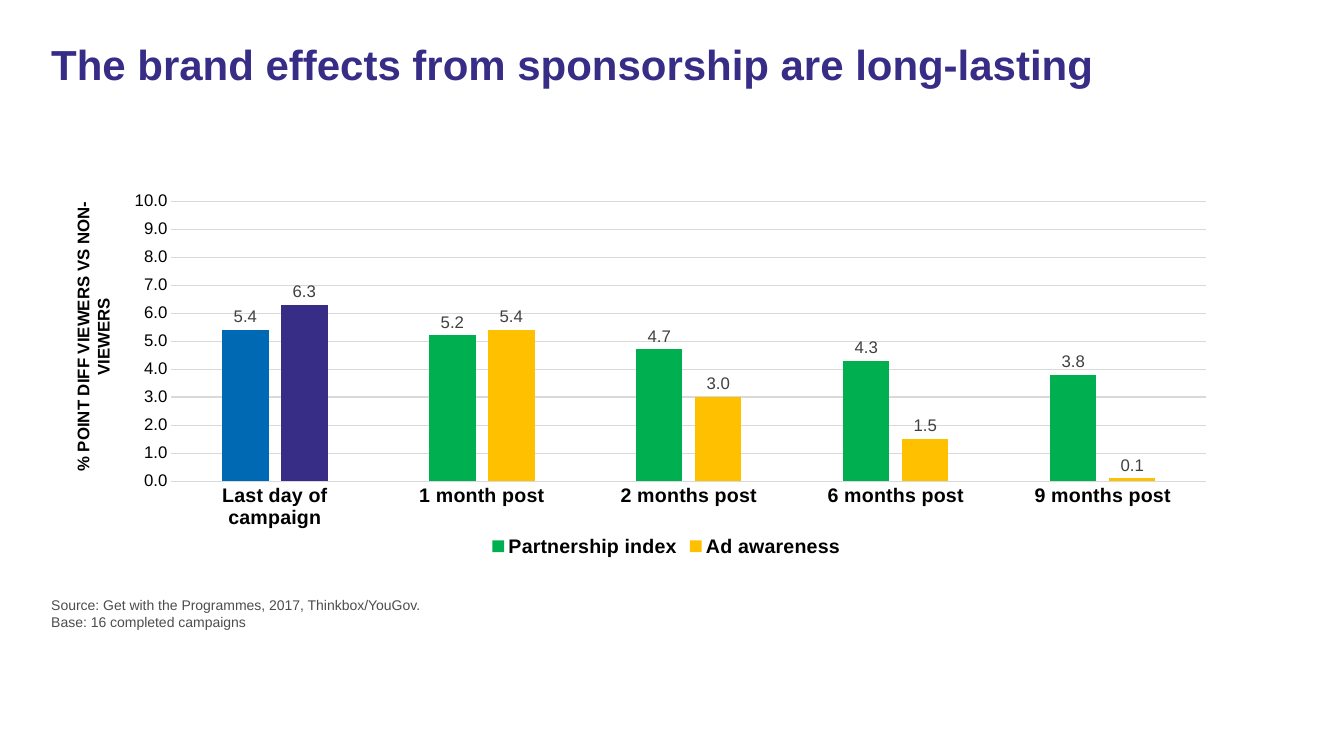
from dataclasses import dataclass

from lxml import etree
from pptx import Presentation
from pptx.chart.chart import Chart
from pptx.chart.data import CategoryChartData
from pptx.dml.color import RGBColor
from pptx.enum.chart import XL_CHART_TYPE, XL_LABEL_POSITION, XL_LEGEND_POSITION, XL_TICK_MARK
from pptx.enum.text import MSO_ANCHOR, PP_ALIGN
from pptx.oxml.ns import qn
from pptx.slide import Slide
from pptx.text.text import Font
from pptx.util import Pt

COLUMNS = XL_CHART_TYPE.COLUMN_CLUSTERED
OUTSIDE_END = XL_LABEL_POSITION.OUTSIDE_END
BOTTOM = XL_LEGEND_POSITION.BOTTOM
NO_TICK = XL_TICK_MARK.NONE
TOP = MSO_ANCHOR.TOP
LEFT, CENTER = PP_ALIGN.LEFT, PP_ALIGN.CENTER

TYPEFACE = "Arial"
BLACK, INDIGO, BLUE, GREEN, AMBER = "000000", "372D87", "0069B4", "00B050", "FFC000"
GRID, LABEL_GREY, SOURCE_GREY = "D9D9D9", "404040", "4D4D4D"


@dataclass(frozen=True)
class Caption:
    lines: tuple[str, ...]
    left: float
    top: float
    width: float
    height: float
    size: float
    color: str
    bold: bool = False
    align: PP_ALIGN = LEFT
    rotation: float = 0
    spacing: float = 1.0


@dataclass(frozen=True)
class Measure:
    name: str
    values: tuple[float, ...]
    color: str
    campaign_color: str


CAPTIONS = (
    Caption(("The brand effects from sponsorship are long-lasting",),
            29.5, 28, 893, 80.5, 30, INDIGO, bold=True, spacing=0.9),
    Caption(("Source: Get with the Programmes, 2017, Thinkbox/YouGov.",
             "Base: 16 completed campaigns"),
            29.5, 422.5, 893, 24, 10, SOURCE_GREY),
    Caption(("% POINT DIFF VIEWERS VS NON-VIEWERS",),
            -44.6, 222.5, 221.8, 36, 12, BLACK, bold=True, align=CENTER, rotation=270),
)
PERIODS = ("Last day of campaign", "1 month post", "2 months post",
           "6 months post", "9 months post")
MEASURES = (
    Measure("Partnership index", (5.4, 5.2, 4.7, 4.3, 3.8), GREEN, BLUE),
    Measure("Ad awareness", (6.3, 5.4, 3, 1.5, 0.1), AMBER, INDIGO),
)
PLOT_LAYOUT = {"layoutTarget": "inner", "xMode": "edge", "yMode": "edge",
               "x": "0.06", "y": "0.097", "w": "0.92", "h": "0.702"}


def rgb(color: str) -> RGBColor:
    return RGBColor.from_string(color)


def style_font(font: Font, size: float, color: str, bold: bool = False) -> None:
    font.name = TYPEFACE
    font.size = Pt(size)
    font.bold = bold
    font.color.rgb = rgb(color)


def add_caption(slide: Slide, caption: Caption) -> None:
    box = slide.shapes.add_textbox(Pt(caption.left), Pt(caption.top),
                                   Pt(caption.width), Pt(caption.height))
    box.rotation = caption.rotation
    frame = box.text_frame
    frame.word_wrap = True
    frame.vertical_anchor = TOP
    frame.text = "\n".join(caption.lines)
    for paragraph in frame.paragraphs:
        paragraph.alignment = caption.align
        paragraph.line_spacing = caption.spacing
        style_font(paragraph.font, caption.size, caption.color, caption.bold)


def place_plot(chart: Chart) -> None:
    plot_area = chart._chartSpace.chart.plotArea
    for existing in plot_area.findall(qn("c:layout")):
        plot_area.remove(existing)
    layout = etree.Element(qn("c:layout"))
    manual = etree.SubElement(layout, qn("c:manualLayout"))
    for tag, value in PLOT_LAYOUT.items():
        etree.SubElement(manual, qn(f"c:{tag}")).set("val", value)
    plot_area.insert(0, layout)


def style_axes(chart: Chart) -> None:
    periods, points = chart.category_axis, chart.value_axis
    for axis in (periods, points):
        axis.major_tick_mark = axis.minor_tick_mark = NO_TICK
    style_font(periods.tick_labels.font, 14, BLACK, bold=True)
    style_font(points.tick_labels.font, 12, BLACK)
    points.minimum_scale, points.maximum_scale, points.major_unit = 0, 10, 1
    points.format.line.fill.background()
    for line in (periods.format.line, points.major_gridlines.format.line):
        line.color.rgb = rgb(GRID)
        line.width = Pt(0.75)


def add_effects_chart(slide: Slide) -> None:
    data = CategoryChartData(number_format="#,##0.0")
    data.categories = PERIODS
    for measure in MEASURES:
        data.add_series(measure.name, measure.values)
    chart = slide.shapes.add_chart(COLUMNS, Pt(74.2), Pt(116), Pt(803.5), Pt(285), data).chart
    chart.has_title = False
    style_font(chart.font, 10, BLACK)
    place_plot(chart)
    style_axes(chart)

    chart.has_legend = True
    chart.legend.position = BOTTOM
    chart.legend.include_in_layout = False
    style_font(chart.legend.font, 14, BLACK, bold=True)

    plot = chart.plots[0]
    plot.gap_width, plot.overlap = 219, -27
    plot.vary_by_categories = False
    for measure, series in zip(MEASURES, plot.series):
        series.invert_if_negative = False
        campaign_day = series.points[0]
        for column, color in ((series, measure.color), (campaign_day, measure.campaign_color)):
            column.format.fill.solid()
            column.format.fill.fore_color.rgb = rgb(color)
        labels = series.data_labels
        labels.show_value = True
        labels.position = OUTSIDE_END
        labels.number_format = "#,##0.0"
        labels.number_format_is_linked = False
        style_font(labels.font, 12, LABEL_GREY)


def main() -> None:
    deck = Presentation()
    deck.slide_width, deck.slide_height = Pt(960), Pt(540)
    slide = deck.slides.add_slide(deck.slide_layouts[6])
    add_effects_chart(slide)
    for caption in CAPTIONS:
        add_caption(slide, caption)
    deck.save("out.pptx")


if __name__ == "__main__":
    main()
